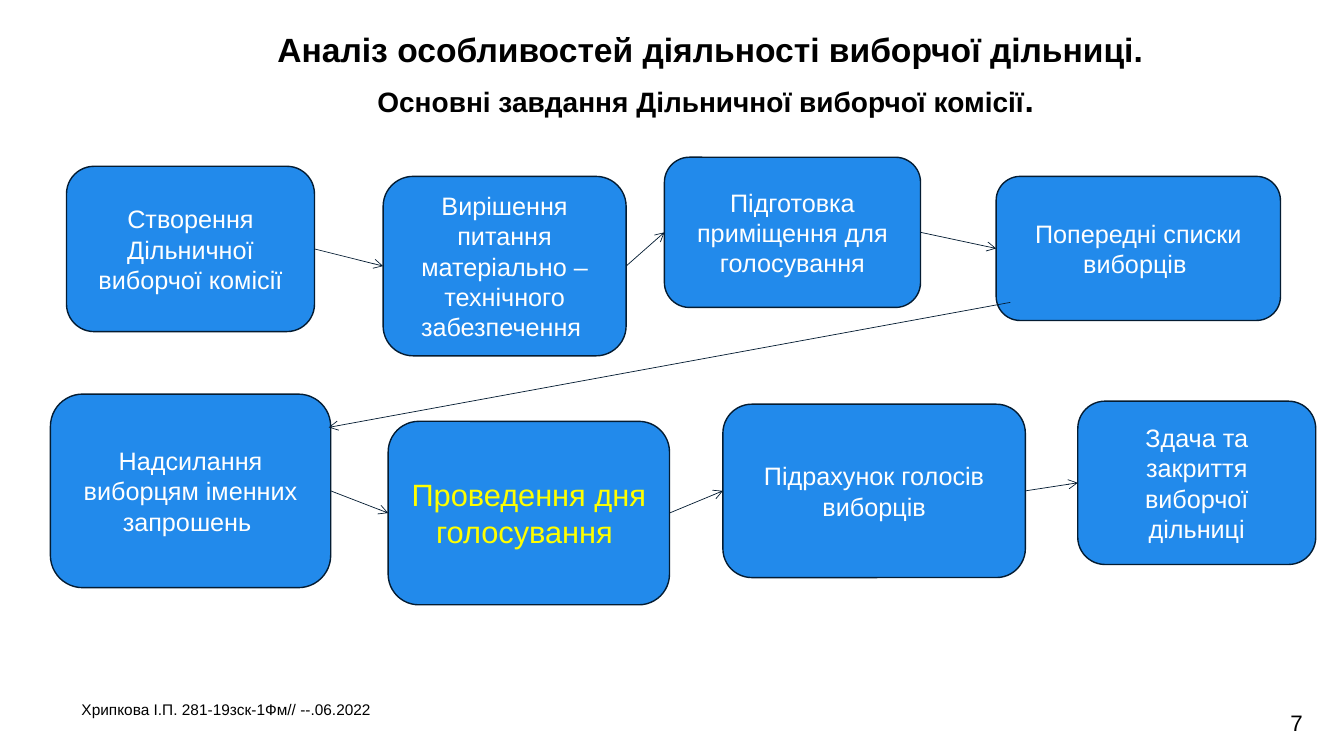
import dataclasses

import lxml.etree
import pptx
import pptx.dml.color
import pptx.enum.shapes
import pptx.enum.text
import pptx.oxml.ns
import pptx.util

Inches = pptx.util.Inches


@dataclasses.dataclass(frozen=True)
class Theme:
    """Colours, font and type sizes of the slide."""
    font: str = "Arial"
    ink: str = "000000"
    fill: str = "228AEB"
    edge: str = "041C32"
    light: str = "FFFFFF"
    accent: str = "FFFF00"
    head: int = 24
    sub: int = 20
    step: int = 18
    key: int = 22
    page: int = 16
    note: int = 11


THEME = Theme()
CENTER = pptx.enum.text.PP_ALIGN.CENTER
LEFT = pptx.enum.text.PP_ALIGN.LEFT

UPPER = [
    ((0.66, 1.65, 2.46, 1.64), "Створення Дільничної виборчої комісії"),
    ((3.8, 1.75, 2.41, 1.78), "Вирішення питання матеріально –технічного забезпечення "),
    ((6.59, 1.56, 2.54, 1.49), "Підготовка приміщення для голосування"),
    ((9.88, 1.75, 2.82, 1.43), "Попередні списки виборців "),
]
KEY = "Проведення дня голосування "
LOWER = [
    ((0.5, 3.91, 2.78, 1.92), "Надсилання виборцям іменних запрошень "),
    ((3.85, 4.18, 2.79, 1.82), KEY),
    ((7.17, 4.01, 3, 1.72), "Підрахунок голосів виборців"),
    ((10.69, 3.98, 2.36, 1.62), "Здача та закриття виборчої дільниці"),
]


def paint(hue):
    """Turn a hex string into a colour."""
    return pptx.dml.color.RGBColor.from_string(hue)


def write(para, text, size, hue=THEME.ink, bold=False):
    """Add one styled run to a paragraph."""
    run = para.add_run()
    run.text = text
    run.font.name = THEME.font
    run.font.size = pptx.util.Pt(size)
    run.font.bold = bold
    run.font.color.rgb = paint(hue)


def title(slide, box):
    """Fill the title placeholder with the heading and its second line."""
    shape = slide.shapes.title
    shape.left, shape.top, shape.width, shape.height = map(Inches, box)
    frame = shape.text_frame
    frame.auto_size = pptx.enum.text.MSO_AUTO_SIZE.NONE
    frame.vertical_anchor = pptx.enum.text.MSO_ANCHOR.TOP
    first, second = frame.paragraphs[0], frame.add_paragraph()
    for para in (first, second):
        para.alignment = CENTER
        para.line_spacing = 0.9
    first.space_before = pptx.util.Pt(0)
    second.space_before = pptx.util.Pt(10)
    write(first, "Аналіз особливостей діяльності виборчої дільниці.", THEME.head, bold=True)
    write(second, "Основні завдання Дільничної виборчої комісії", THEME.sub, bold=True)
    write(second, ". ", THEME.head, bold=True)


def label(slide, box, text, size, align):
    """Place a one-line text box."""
    frame = slide.shapes.add_textbox(*map(Inches, box)).text_frame
    frame.word_wrap = True
    para = frame.paragraphs[0]
    para.alignment = align
    write(para, text, size)


def step(slide, box, text):
    """Draw one rounded step, with the key step set apart."""
    kind = pptx.enum.shapes.MSO_SHAPE.ROUNDED_RECTANGLE
    shape = slide.shapes.add_shape(kind, *map(Inches, box))
    shape.shadow.inherit = False
    shape.fill.solid()
    shape.fill.fore_color.rgb = paint(THEME.fill)
    shape.line.color.rgb = paint(THEME.edge)
    shape.line.width = pptx.util.Pt(1)
    frame = shape.text_frame
    frame.word_wrap = True
    frame.vertical_anchor = pptx.enum.text.MSO_ANCHOR.MIDDLE
    para = frame.paragraphs[0]
    para.alignment = CENTER
    size, hue = (THEME.key, THEME.accent) if text == KEY else (THEME.step, THEME.light)
    write(para, text, size, hue)
    return shape


def arrow(slide, start, end):
    """Draw a thin arrow between two points."""
    kind = pptx.enum.shapes.MSO_CONNECTOR.STRAIGHT
    link = slide.shapes.add_connector(kind, *map(Inches, start + end))
    link.line.color.rgb = paint(THEME.edge)
    link.line.width = pptx.util.Pt(0.5)
    qn = pptx.oxml.ns.qn
    lxml.etree.SubElement(link.line._get_or_add_ln(), qn("a:tailEnd"), type="arrow")
    lxml.etree.SubElement(link._element.spPr, qn("a:effectLst"))
    return link


def chain(slide, items):
    """Draw a row of steps and join each one to the next."""
    steps = [step(slide, box, text) for box, text in items]
    for prev, new in zip(steps, steps[1:]):
        link = arrow(slide, (0, 0), (1, 1))
        link.begin_connect(prev, 3)
        link.end_connect(new, 1)


def main():
    """Build and save the slide."""
    deck = pptx.Presentation()
    deck.slide_width, deck.slide_height = Inches(13.33), Inches(7.5)
    slide = deck.slides.add_slide(deck.slide_layouts[5])
    title(slide, (1.63, 0.28, 10.83, 0.66))
    label(slide, (12.54, 6.99, 0.64, 0.37), "7", THEME.page, CENTER)
    label(slide, (0.71, 6.9, 10.89, 0.26), "Хрипкова І.П. 281-19зск-1Фм// --.06.2022", THEME.note, LEFT)
    chain(slide, UPPER)
    chain(slide, LOWER)
    arrow(slide, (10.02, 3), (3.26, 4.24))
    deck.save("out.pptx")


if __name__ == "__main__":
    main()
